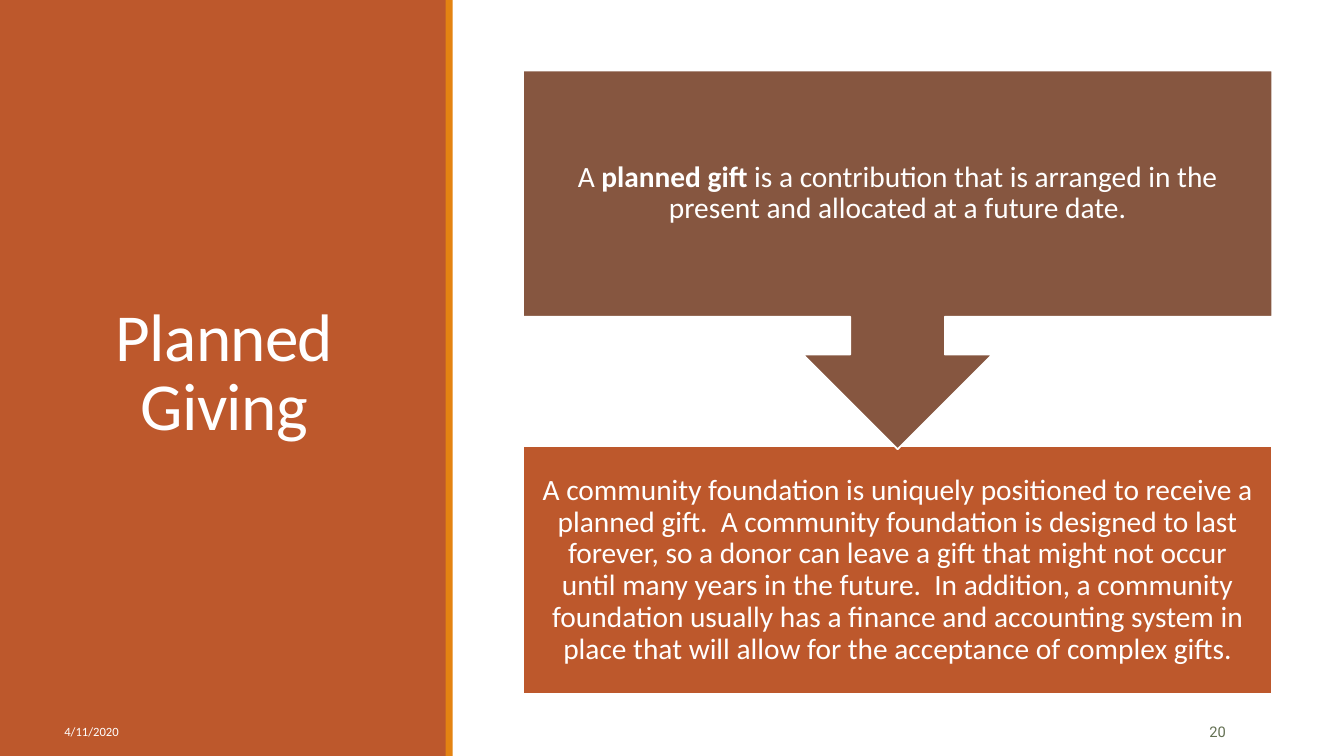
from pptx import Presentation
from pptx.dml.color import RGBColor
from pptx.enum.shapes import MSO_SHAPE
from pptx.enum.text import MSO_ANCHOR, MSO_AUTO_SIZE, PP_ALIGN
from pptx.util import Pt

COLORS = {
    "rust": "BD582C",
    "orange": "E48312",
    "brown": "865640",
    "olive": "637052",
    "white": "FFFFFF",
}

GIFT = [
    ("A ", False),
    ("planned gift", True),
    (" is a contribution that is arranged in the present and allocated at a future date.", False),
]
FOUNDATION = [(
    "A community foundation is uniquely positioned to receive a planned gift.  "
    "A community foundation is designed to last forever, so a donor can leave a gift "
    "that might not occur until many years in the future.  In addition, a community "
    "foundation usually has a finance and accounting system in place that will allow "
    "for the acceptance of complex gifts.", False,
)]


def color(name):
    return RGBColor.from_string(COLORS[name])


def write(shape, spans, size, font="Calibri", ink="white", align=PP_ALIGN.LEFT,
          line_spacing=1.0, space_after=0, margin=None, tracking=None):
    frame = shape.text_frame
    frame.word_wrap = True
    frame.auto_size = MSO_AUTO_SIZE.NONE
    frame.vertical_anchor = MSO_ANCHOR.MIDDLE
    if margin is not None:
        frame.margin_left = frame.margin_right = Pt(margin)
        frame.margin_top = frame.margin_bottom = Pt(margin)
    para = frame.paragraphs[0]
    para.alignment = align
    para.line_spacing = line_spacing
    para.space_after = Pt(space_after)
    for text, bold in spans:
        span = para.add_run()
        span.text = text
        span.font.name = font
        span.font.size = Pt(size)
        span.font.bold = bold
        span.font.color.rgb = color(ink)
        if tracking is not None:
            span.font._element.set("spc", str(tracking))


def add_block(page, box, fill, kind=MSO_SHAPE.RECTANGLE, outline=None):
    block = page.shapes.add_shape(kind, *map(Pt, box))
    block.shadow.inherit = False
    block.fill.solid()
    block.fill.fore_color.rgb = color(fill)
    if outline:
        block.line.color.rgb = color(outline)
        block.line.width = Pt(1.25)
    else:
        block.line.fill.background()
    return block


def add_title_panel(page, box):
    left, top, width, height = box
    panel = add_block(page, box, "rust")
    add_block(page, (left + width - 0.7, top, 5, height), "orange")
    title = page.shapes.title
    title.element.addprevious(panel.element)
    title.left, title.top = Pt(left + 38.9), Pt(top + 41)
    title.width, title.height = Pt(242.6), Pt(454.3)
    write(title, [("Planned Giving", False)], 48, align=PP_ALIGN.CENTER,
          line_spacing=0.85, tracking=-50)


def add_process(page, box):
    left, top, width, height = box
    step_height = 176.4
    lower_top = top + height - step_height
    lower = add_block(page, (left, lower_top, width, step_height), "rust", outline="white")
    upper = add_block(page, (left, top, width, lower_top - top + 2), "brown",
                      MSO_SHAPE.DOWN_ARROW_CALLOUT, outline="white")
    for step, spans in ((upper, GIFT), (lower, FOUNDATION)):
        write(step, spans, 21, align=PP_ALIGN.CENTER, line_spacing=0.9, margin=11.5)


def add_footer(page, box):
    left, top, width, height = box
    date = page.shapes.add_textbox(Pt(left), Pt(top), Pt(136.8), Pt(height))
    write(date, [("4/11/2020", False)], 9, space_after=6)
    number_width = 85.7
    number = page.shapes.add_textbox(
        Pt(left + width - number_width), Pt(top), Pt(number_width), Pt(height))
    write(number, [("20", False)], 10.5, font="Roboto", ink="olive",
          align=PP_ALIGN.RIGHT, space_after=6)


def main():
    deck = Presentation()
    deck.slide_width, deck.slide_height = Pt(960), Pt(540)
    page = deck.slides.add_slide(deck.slide_layouts[5])
    add_title_panel(page, (0, 0, 319, 540))
    add_process(page, (373.7, 50.4, 535, 445))
    add_footer(page, (38.9, 508.3, 843.8, 28.8))
    deck.save("out.pptx")


if __name__ == "__main__":
    main()
